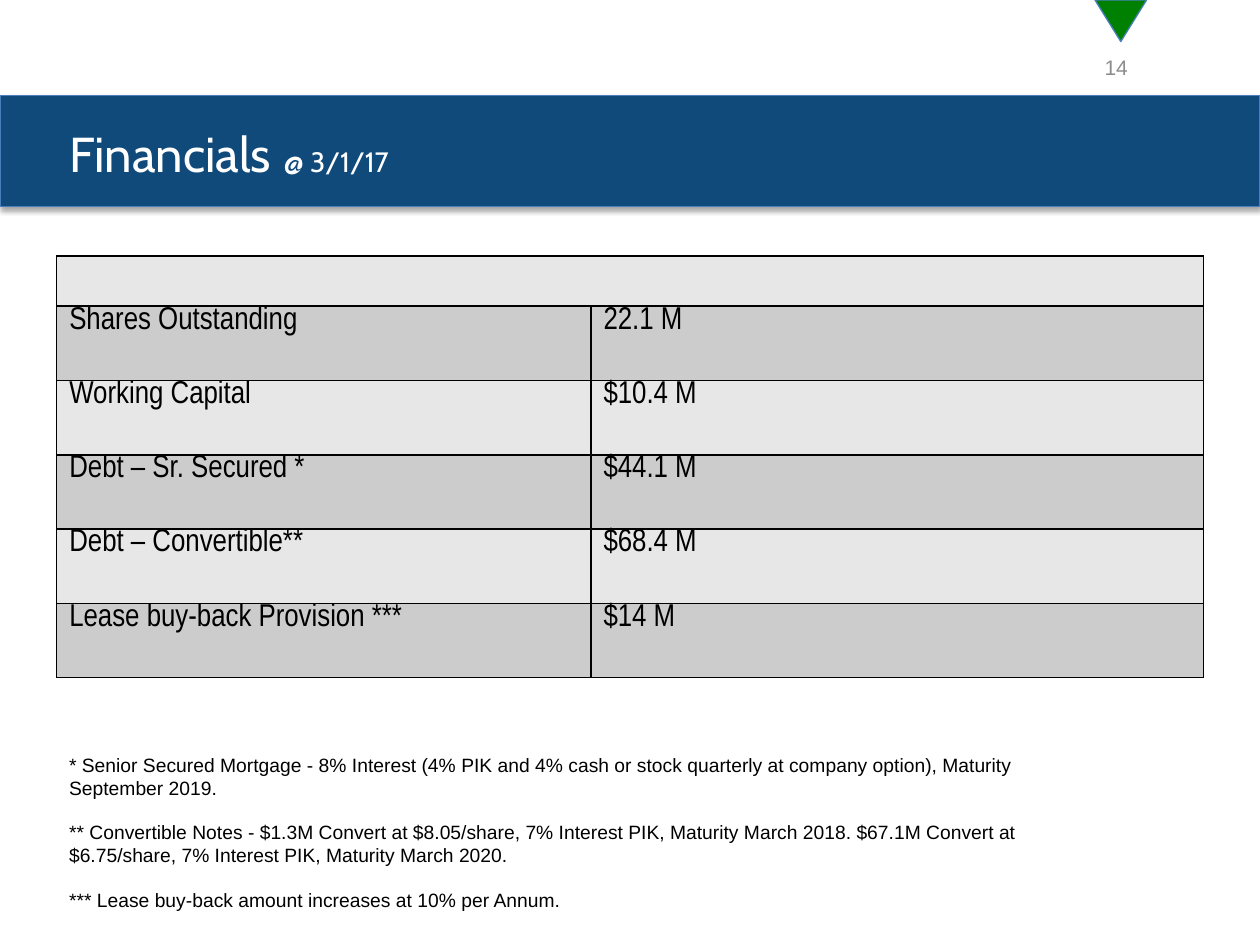
from lxml import etree
from pptx import Presentation
from pptx.dml.color import RGBColor
from pptx.enum.shapes import MSO_SHAPE
from pptx.enum.text import MSO_ANCHOR, MSO_AUTO_SIZE, PP_ALIGN
from pptx.oxml import parse_xml
from pptx.oxml.ns import nsdecls, qn
from pptx.util import Inches, Pt

RECT, TRIANGLE = MSO_SHAPE.RECTANGLE, MSO_SHAPE.ISOSCELES_TRIANGLE
MIDDLE, TOP = MSO_ANCHOR.MIDDLE, MSO_ANCHOR.TOP
LEFT, RIGHT = PP_ALIGN.LEFT, PP_ALIGN.RIGHT
NO_FIT = MSO_AUTO_SIZE.NONE
GRID = Inches(0.1)  # the slide is 100 columns by 75 rows

FACTS = [
    ("Shares Outstanding", "22.1 M"),
    ("Working Capital", "$10.4 M"),
    ("Debt – Sr. Secured *", "$44.1 M"),
    ("Debt – Convertible**", "$68.4 M"),
    ("Lease buy-back Provision ***", "$14 M"),
]
NOTES = [
    "* Senior Secured Mortgage - 8% Interest (4% PIK and 4% cash or stock "
    "quarterly at company option), Maturity September 2019.",
    "** Convertible Notes - $1.3M Convert at $8.05/share, 7% Interest PIK, "
    "Maturity March 2018. $67.1M Convert at $6.75/share, 7% Interest PIK, "
    "Maturity March 2020.",
    "*** Lease buy-back amount increases at 10% per Annum.",
]


def color(code):
    return RGBColor.from_string(code)


def span(*cells):
    """Turn grid cells into slide lengths."""
    return [round(n * GRID) for n in cells]


class Deck:
    navy, edge, green = "104A7A", "4B7EBC", "008000"
    white, black, gray = "FFFFFF", "000000", "8C8C8C"
    bands = "E7E7E7", "CCCCCC"
    head, body, narrow = "Cabin", "Arial", "Arial Narrow"

    def __init__(self):
        self.file = Presentation()
        self.file.slide_width, self.file.slide_height = span(100, 75)
        self.slide = self.file.slides.add_slide(self.file.slide_layouts[5])

    def run(self, para, text, size, face, code):
        part = para.add_run()
        part.text = text
        part.font.size, part.font.name = Pt(size), face
        part.font.color.rgb = color(code)

    def shape(self, kind, at, fill, turn=0):
        item = self.slide.shapes.add_shape(kind, *span(*at))
        item.shadow.inherit = False
        item.rotation = turn
        item.fill.solid()
        item.fill.fore_color.rgb = color(fill)
        item.line.color.rgb = color(self.edge)
        item.line.width = Pt(0.75)
        return item

    def shade(self, item):
        """Cast a soft shadow straight down."""
        effects = item._element.spPr.find(qn("a:effectLst"))
        cast = etree.SubElement(
            effects, qn("a:outerShdw"), blurRad=str(Pt(3.1)),
            dist=str(Pt(1.8)), dir="5400000", rotWithShape="0")
        tint = etree.SubElement(cast, qn("a:srgbClr"), val=self.black)
        etree.SubElement(tint, qn("a:alpha"), val="35000")

    def title(self, at, parts):
        item = self.slide.shapes.title
        item.left, item.top, item.width, item.height = span(*at)
        tree = self.slide.shapes._spTree
        tree.append(item._element)  # bring in front of the bar
        frame = item.text_frame
        frame.auto_size, frame.vertical_anchor = NO_FIT, MIDDLE
        para = frame.paragraphs[0]
        para.alignment = LEFT
        for text, size in parts:
            self.run(para, text, size, self.head, self.white)

    def text(self, at, lines, size, code, align=LEFT, anchor=TOP, after=0):
        frame = self.slide.shapes.add_textbox(*span(*at)).text_frame
        frame.word_wrap, frame.vertical_anchor = True, anchor
        for i, line in enumerate(lines):
            para = frame.add_paragraph() if i else frame.paragraphs[0]
            para.alignment, para.space_after = align, Pt(after)
            self.run(para, line, size, self.body, code)

    def border(self, cell):
        props = cell._tc.get_or_add_tcPr()
        for i, side in enumerate(("lnL", "lnR", "lnT", "lnB")):
            props.insert(i, parse_xml(
                f'<a:{side} {nsdecls("a")} w="{Pt(1)}"><a:solidFill>'
                f'<a:srgbClr val="{self.black}"/></a:solidFill></a:{side}>'))

    def table(self, at, cols, rows, data):
        """Draw banded rows of data below one merged, empty row."""
        grid = self.slide.shapes.add_table(
            len(rows), len(cols), *span(*at)).table
        for col, size in zip(grid.columns, span(*cols)):
            col.width = size
        for row, size in zip(grid.rows, span(*rows)):
            row.height = size
        for r, row in enumerate(grid.rows):
            for c, cell in enumerate(row.cells):
                cell.margin_top = cell.margin_bottom = 0
                cell.fill.solid()
                cell.fill.fore_color.rgb = color(self.bands[r % 2])
                self.border(cell)
                if r:
                    self.run(cell.text_frame.paragraphs[0],
                             data[r - 1][c], 18, self.narrow, self.black)
        grid.cell(0, 0).merge(grid.cell(0, len(cols) - 1))


def main():
    deck = Deck()
    deck.shape(TRIANGLE, (86.9, 0, 4.1, 3.3), deck.green, turn=180)
    deck.text((83.4, 3.3, 7.1, 4), ["14"], 12, deck.gray, RIGHT, MIDDLE)
    bar = deck.shape(RECT, (0, 7.6, 100, 8.8), deck.navy)
    deck.shade(bar)
    deck.title((4.5, 9, 88, 5.8),
               [("Financials", 28), (" ", 32), ("@ 3/1/17", 16)])
    deck.table((4.5, 20.3, 91, 33.5), (42.4, 48.6),
               [4] + [5.9] * len(FACTS), FACTS)
    deck.text((4.5, 59.3, 80.6, 13.6), NOTES, 11, deck.black, after=12)
    deck.file.save("out.pptx")


if __name__ == "__main__":
    main()
